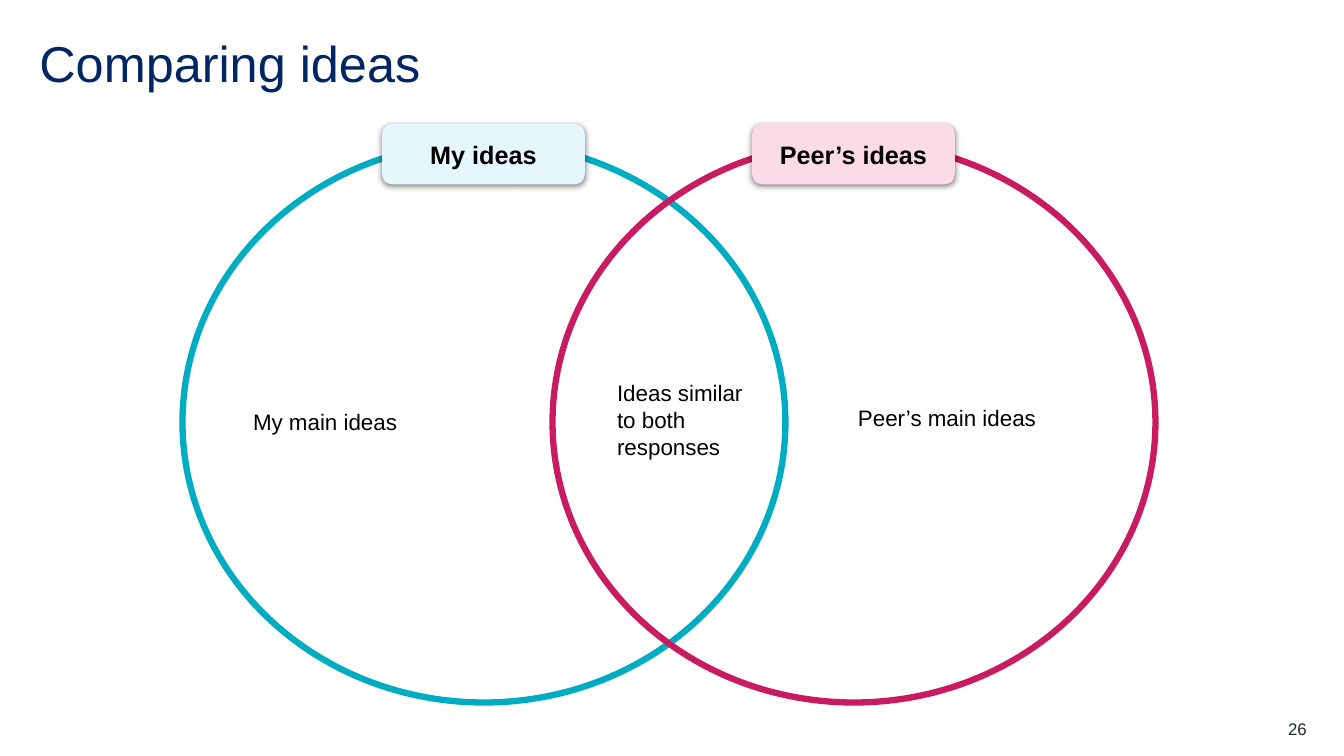
"""Build a slide with a two-circle Venn diagram that compares ideas."""
from dataclasses import dataclass

from lxml import etree
from pptx import Presentation
from pptx.dml.color import RGBColor
from pptx.enum.shapes import MSO_SHAPE
from pptx.enum.text import MSO_ANCHOR, MSO_AUTO_SIZE, PP_ALIGN
from pptx.oxml.ns import qn
from pptx.util import Emu, Pt

OVAL, ROUNDED = MSO_SHAPE.OVAL, MSO_SHAPE.ROUNDED_RECTANGLE
TOP, MIDDLE = MSO_ANCHOR.TOP, MSO_ANCHOR.MIDDLE
LEFT, CENTER, RIGHT = PP_ALIGN.LEFT, PP_ALIGN.CENTER, PP_ALIGN.RIGHT
NO_AUTOFIT = MSO_AUTO_SIZE.NONE
TITLE_ONLY = 5
EMU_PER_PX = 9144
FONT = "Arial"
COLORS = {
    "navy": "002664",
    "teal": "00ACC2",
    "pale_teal": "E5F7FC",
    "crimson": "C81B62",
    "pale_pink": "FBDBE7",
    "black": "000000",
    "charcoal": "22272B",
}
CIRCLE_TOP, CIRCLE_W, CIRCLE_H = 141, 598, 556
LABEL_TOP, LABEL_W, LABEL_H = 123, 201, 60


@dataclass
class Circle:
    """A Venn circle with its heading."""
    left: int
    heading: str
    line: str
    fill: str


@dataclass
class Note:
    """A text box on the slide."""
    text: str
    box: tuple[int, int, int, int]
    size: int = 16
    color: str = "black"
    align: PP_ALIGN = LEFT
    inset: int = 13


CIRCLES = [
    Circle(181, "My ideas", "teal", "pale_teal"),
    Circle(548, "Peer’s ideas", "crimson", "pale_pink"),
]
NOTES = [
    Note("My main ideas", (238, 392, 311, 53)),
    Note("Peer’s main ideas", (838, 388, 250, 53)),
    Note("Ideas similar to both responses", (599, 363, 165, 112)),
    Note("26", (1217, 713, 79, 20), 12, "charcoal", RIGHT, 0),
]


def px(n: int) -> Emu:
    """Turn px into EMU."""
    return Emu(n * EMU_PER_PX)


def rgb(name: str) -> RGBColor:
    """Look up a named colour."""
    return RGBColor.from_string(COLORS[name])


def write(tf, text: str, size: int, color: str, align=LEFT, anchor=TOP,
          inset: tuple[int, int] = (0, 0), bold: bool = False):
    """Fill a text frame with one formatted run and return its paragraph."""
    tf.word_wrap = True
    tf.auto_size = NO_AUTOFIT
    tf.vertical_anchor = anchor
    tf.margin_left = tf.margin_right = px(inset[0])
    tf.margin_top = tf.margin_bottom = px(inset[1])
    p = tf.paragraphs[0]
    p.alignment = align
    r = p.add_run()
    r.text = text
    r.font.name, r.font.size, r.font.bold = FONT, Pt(size), bold
    r.font.color.rgb = rgb(color)
    return p


def add_shadow(sp) -> None:
    """Give a shape a soft shadow below it."""
    sp.shadow.inherit = False
    effects = sp._element.spPr.find(qn("a:effectLst"))
    shadow = etree.SubElement(effects, qn("a:outerShdw"), blurRad=str(Pt(4.5)),
                              dist=str(Pt(1.5)), dir="5400000", algn="t", rotWithShape="0")
    color = etree.SubElement(shadow, qn("a:srgbClr"), val=COLORS["black"])
    etree.SubElement(color, qn("a:alpha"), val="50000")


def draw_circle(s, circle: Circle) -> None:
    """Draw a circle grouped with the heading centred on its top edge."""
    group = s.shapes.add_group_shape()
    sp = group.shapes.add_shape(OVAL, px(circle.left), px(CIRCLE_TOP),
                                px(CIRCLE_W), px(CIRCLE_H))
    sp.shadow.inherit = False
    sp.fill.background()
    sp.line.color.rgb = rgb(circle.line)
    sp.line.width = Pt(4.5)

    label_left = circle.left + (CIRCLE_W - LABEL_W) // 2
    sp = group.shapes.add_shape(ROUNDED, px(label_left), px(LABEL_TOP),
                                px(LABEL_W), px(LABEL_H))
    sp.fill.solid()
    sp.fill.fore_color.rgb = rgb(circle.fill)
    sp.line.fill.background()
    add_shadow(sp)
    write(sp.text_frame, circle.heading, 18, "black", CENTER, MIDDLE, (9, 4), True)


def draw_note(s, note: Note) -> None:
    """Draw a text box."""
    sp = s.shapes.add_textbox(*map(px, note.box))
    write(sp.text_frame, note.text, note.size, note.color, note.align,
          inset=(note.inset, note.inset))


def main() -> None:
    """Build and save the slide."""
    prs = Presentation()
    prs.slide_width, prs.slide_height = px(1333), px(750)
    s = prs.slides.add_slide(prs.slide_layouts[TITLE_ONLY])
    title = s.shapes.title
    title.left, title.top, title.width, title.height = map(px, (39, 39, 1256, 60))
    p = write(title.text_frame, "Comparing ideas", 36, "navy")
    p.line_spacing = 0.9
    for circle in CIRCLES:
        draw_circle(s, circle)
    for note in NOTES:
        draw_note(s, note)
    prs.save("out.pptx")


if __name__ == "__main__":
    main()
